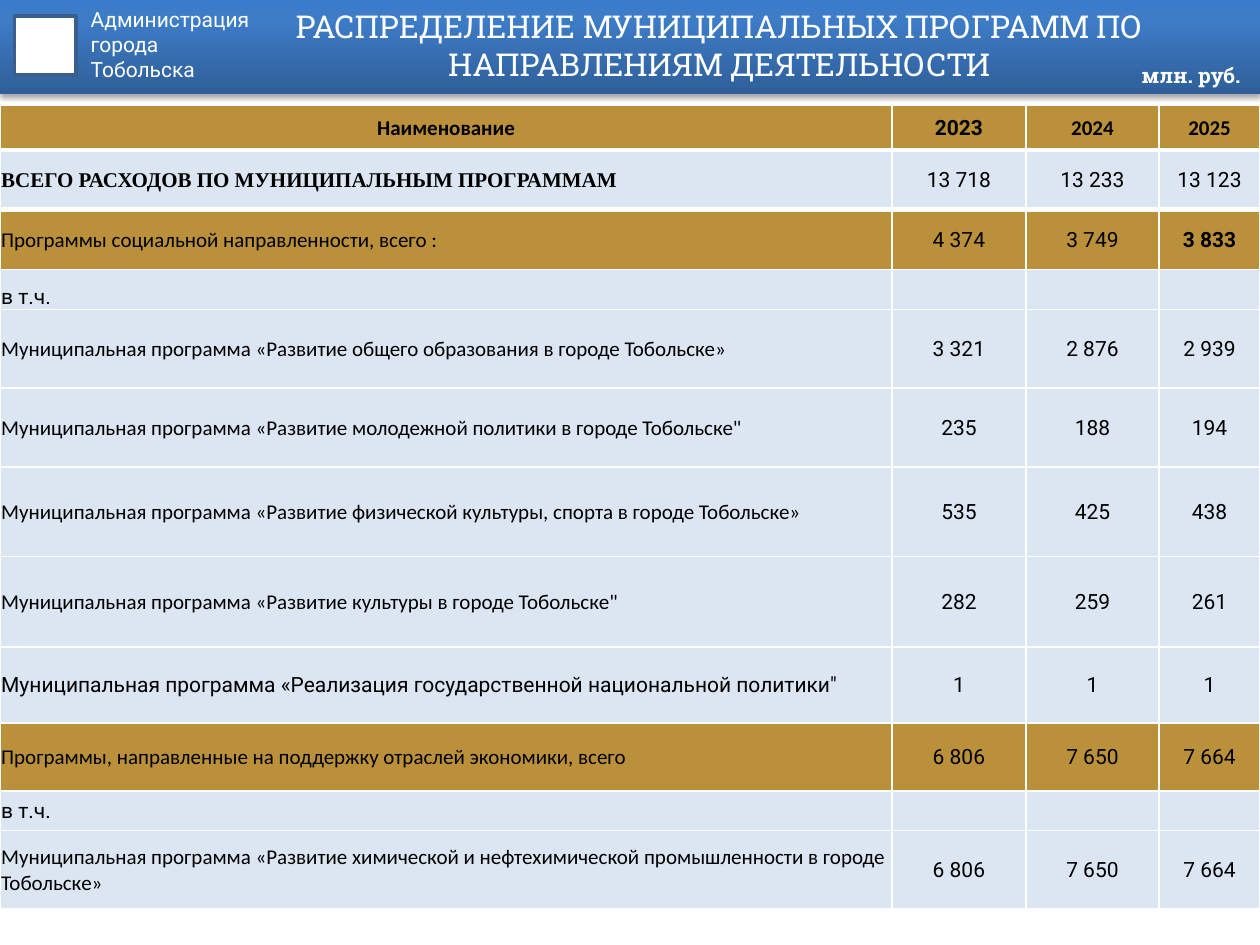
from dataclasses import dataclass

import pptx
import pptx.dml.color
import pptx.enum.shapes
import pptx.enum.text
import pptx.oxml
import pptx.oxml.ns
import pptx.util

Pt = pptx.util.Pt
Align = pptx.enum.text.PP_ALIGN
Anchor = pptx.enum.text.MSO_ANCHOR
AutoSize = pptx.enum.text.MSO_AUTO_SIZE
RECTANGLE = pptx.enum.shapes.MSO_SHAPE.RECTANGLE
NAMESPACE = pptx.oxml.ns.nsdecls("a")


@dataclass(frozen=True)
class Theme:
    white: str = "FFFFFF"
    black: str = "000000"
    gold: str = "BB903B"
    pale: str = "DCE6F2"
    emblem_line: str = "3A5F8C"
    band: tuple = ((0, "2F5F99"), (80, "3D7CC7"), (100, "3A7CCB"))
    title_size: int = 18
    text_size: int = 12
    sans: str = "Roboto"
    slab: str = "Roboto Slab"
    label: str = "Calibri"
    serif: str = "Times New Roman"


THEME = Theme()

COLUMN_WIDTHS = (509.8, 76.4, 76.2, 57.6)
HEADINGS = ("Наименование", "2023", "2024", "2025")
# label, values, row height, label font, fill
ROWS = (
    ("ВСЕГО РАСХОДОВ ПО МУНИЦИПАЛЬНЫМ ПРОГРАММАМ",
     ("13 718", "13 233", "13 123"), 34, THEME.serif, THEME.pale),
    ("Программы социальной направленности, всего :",
     ("4 374", "3 749", "3 833"), 34.2, THEME.label, THEME.gold),
    ("в т.ч.", ("", "", ""), 22.8, THEME.sans, THEME.pale),
    ("Муниципальная программа «Развитие общего образования в городе Тобольске»",
     ("3 321", "2 876", "2 939"), 45, THEME.label, THEME.pale),
    ("Муниципальная программа «Развитие молодежной политики в городе Тобольске\"",
     ("235", "188", "194"), 45, THEME.label, THEME.pale),
    ("Муниципальная программа «Развитие физической культуры, спорта в городе Тобольске»",
     ("535", "425", "438"), 51.4, THEME.label, THEME.pale),
    ("Муниципальная программа «Развитие культуры в городе Тобольске\"",
     ("282", "259", "261"), 51.6, THEME.label, THEME.pale),
    ("Муниципальная программа «Реализация государственной национальной политики\"",
     ("1", "1", "1"), 43.4, THEME.sans, THEME.pale),
    ("Программы, направленные на поддержку отраслей экономики, всего",
     ("6 806", "7 650", "7 664"), 38.8, THEME.label, THEME.gold),
    ("в т.ч.", ("", "", ""), 22.8, THEME.sans, THEME.pale),
    ("Муниципальная программа «Развитие химической и нефтехимической промышленности в городе Тобольске»",
     ("6 806", "7 650", "7 664"), 44.4, THEME.label, THEME.pale),
)
HEADING_HEIGHT = 25.6


def color(value):
    return pptx.dml.color.RGBColor.from_string(value)


def format_paragraph(paragraph, font_name, text_color, size=THEME.text_size,
                     bold=False, align=Align.LEFT):
    paragraph.alignment = align
    font = paragraph.font
    font.name, font.size, font.bold = font_name, Pt(size), bold
    font.color.rgb = color(text_color)


def add_rectangle(slide, left, top, width, height):
    shape = slide.shapes.add_shape(RECTANGLE, Pt(left), Pt(top), Pt(width), Pt(height))
    shape.shadow.inherit = False
    return shape


def add_header_band(slide):
    band = add_rectangle(slide, 0, 0, 720, 54)
    band.line.fill.background()
    band.fill.gradient()
    band.fill.gradient_angle = 90
    properties = band._element.spPr
    stops = properties.find(".//" + pptx.oxml.ns.qn("a:gsLst"))
    for stop in list(stops):
        stops.remove(stop)
    for position, value in THEME.band:
        stops.append(pptx.oxml.parse_xml(
            f'<a:gs {NAMESPACE} pos="{position * 1000}"><a:srgbClr val="{value}"/></a:gs>'))
    effects = properties.find(pptx.oxml.ns.qn("a:effectLst"))
    effects.append(pptx.oxml.parse_xml(
        f'<a:outerShdw {NAMESPACE} blurRad="{Pt(3.1)}" dist="{Pt(1.8)}" dir="5400000" rotWithShape="0">'
        f'<a:srgbClr val="{THEME.black}"><a:alpha val="35000"/></a:srgbClr></a:outerShdw>'))


def add_emblem(slide):
    emblem = add_rectangle(slide, 8.4, 9, 35, 34)
    emblem.fill.solid()
    emblem.fill.fore_color.rgb = color(THEME.white)
    emblem.line.color.rgb = color(THEME.emblem_line)
    emblem.line.width = Pt(2)


def add_text(slide, left, top, width, height, lines, font_name, bold=False, wrap=True):
    box = slide.shapes.add_textbox(Pt(left), Pt(top), Pt(width), Pt(height))
    frame = box.text_frame
    frame.word_wrap = wrap
    frame.auto_size = AutoSize.SHAPE_TO_FIT_TEXT
    frame.text = "\n".join(lines)
    for paragraph in frame.paragraphs:
        format_paragraph(paragraph, font_name, THEME.white, bold=bold)


def set_title(slide, text):
    title = slide.shapes.title
    title.left, title.top, title.width, title.height = Pt(144.7), Pt(0), Pt(532.8), Pt(51.4)
    frame = title.text_frame
    frame.text = text
    frame.word_wrap = True
    frame.auto_size = AutoSize.NONE
    frame.vertical_anchor = Anchor.MIDDLE
    format_paragraph(frame.paragraphs[0], THEME.slab, THEME.white,
                     THEME.title_size, align=Align.CENTER)
    # Bring the title in front of the header band.
    slide.shapes._spTree.append(title._element)


def set_borders(cell, top, bottom):
    properties = cell._tc.get_or_add_tcPr()
    for side, width in (("L", 1), ("R", 1), ("T", top), ("B", bottom)):
        properties.append(pptx.oxml.parse_xml(
            f'<a:ln{side} {NAMESPACE} w="{Pt(width)}"><a:solidFill>'
            f'<a:srgbClr val="{THEME.white}"/></a:solidFill></a:ln{side}>'))


def fill_cell(cell, text, font_name, fill, bold, align, top, bottom):
    cell.text = text
    format_paragraph(cell.text_frame.paragraphs[0], font_name, THEME.black,
                     bold=bold, align=align)
    cell.vertical_anchor = Anchor.MIDDLE
    cell.margin_left = cell.margin_right = cell.margin_top = Pt(0.7)
    cell.margin_bottom = Pt(0)
    set_borders(cell, top, bottom)
    cell.fill.solid()
    cell.fill.fore_color.rgb = color(fill)


def add_programme_table(slide):
    heights = [HEADING_HEIGHT] + [row[2] for row in ROWS]
    table = slide.shapes.add_table(len(heights), len(COLUMN_WIDTHS), Pt(0), Pt(60.2),
                                   Pt(sum(COLUMN_WIDTHS)), Pt(sum(heights))).table
    table.first_row = table.horz_banding = False
    for column, width in zip(table.columns, COLUMN_WIDTHS):
        column.width = Pt(width)
    for row, height in zip(table.rows, heights):
        row.height = Pt(height)

    for column, heading in enumerate(HEADINGS):
        font_name = THEME.sans if heading == "2023" else THEME.label
        fill_cell(table.cell(0, column), heading, font_name, THEME.gold,
                  True, Align.CENTER, 1, 3)
    for index, (label, values, _, label_font, fill) in enumerate(ROWS, start=1):
        top, bottom = (3 if index <= 2 else 1), (3 if index == 1 else 1)
        fill_cell(table.cell(index, 0), label, label_font, fill,
                  index == 1, Align.LEFT, top, bottom)
        for column, value in enumerate(values, start=1):
            fill_cell(table.cell(index, column), value, THEME.sans, fill,
                      value == "3 833", Align.CENTER, top, bottom)
    table.cell(3, 0).vertical_anchor = Anchor.BOTTOM


def main():
    presentation = pptx.Presentation()
    presentation.slide_width, presentation.slide_height = Pt(720), Pt(540)
    slide = presentation.slides.add_slide(presentation.slide_layouts[5])
    add_header_band(slide)
    add_emblem(slide)
    add_text(slide, 44.8, 0, 168.5, 50, ("Администрация", "города", "Тобольска"), THEME.sans)
    set_title(slide, "РАСПРЕДЕЛЕНИЕ МУНИЦИПАЛЬНЫХ ПРОГРАММ ПО НАПРАВЛЕНИЯМ ДЕЯТЕЛЬНОСТИ")
    add_programme_table(slide)
    add_text(slide, 645.2, 32.4, 73, 21.8, ("млн. руб.",), THEME.slab, bold=True, wrap=False)
    presentation.save("out.pptx")


if __name__ == "__main__":
    main()
